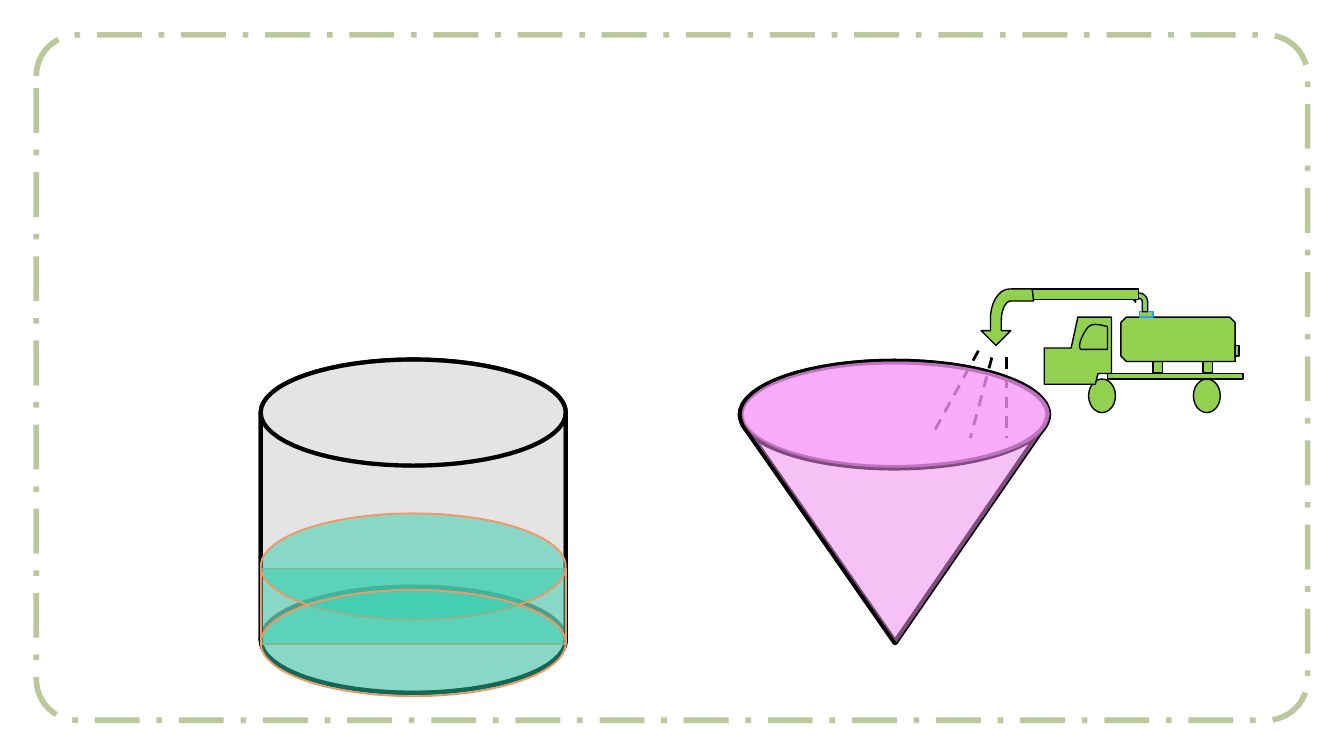
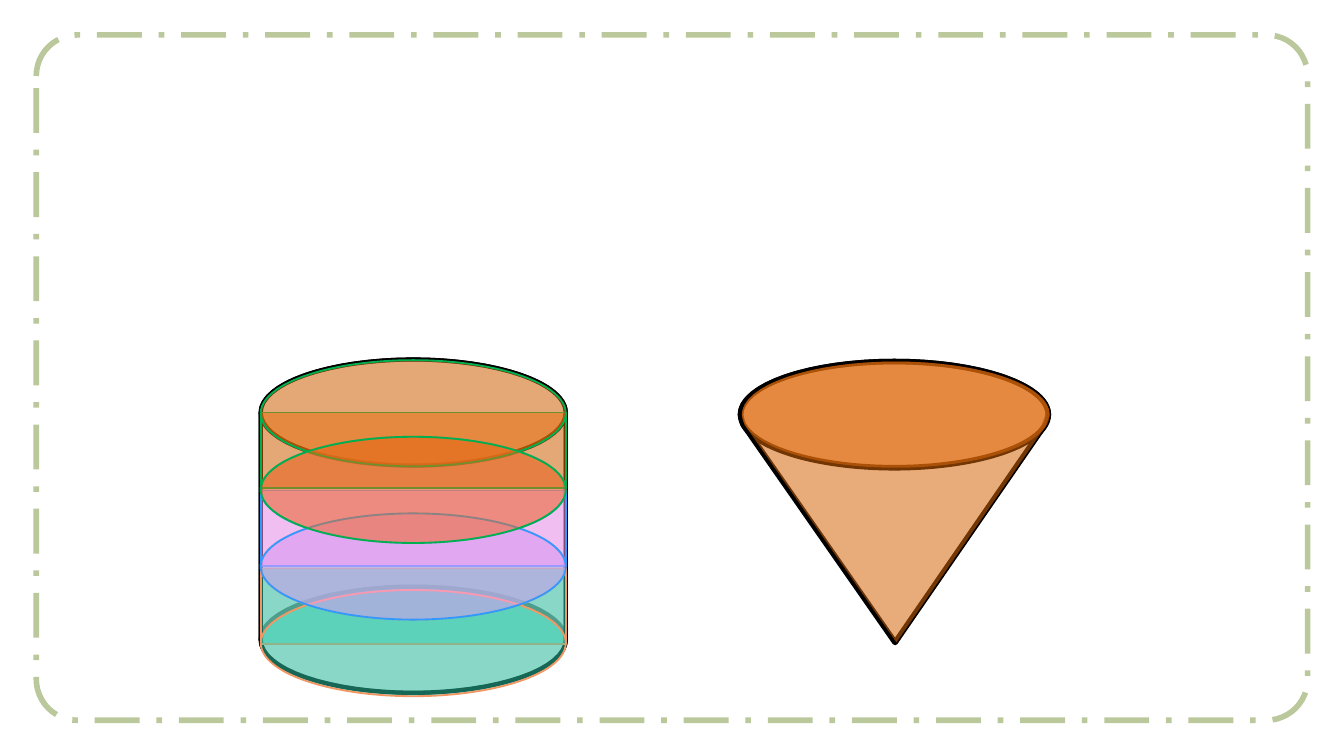
"""Build two slides comparing the volumes of a cylinder and a cone."""
import math

from lxml import etree
from pptx import Presentation
from pptx.dml.color import RGBColor
from pptx.enum import dml, shapes as kinds
from pptx.oxml.ns import qn
from pptx.util import Inches, Pt

WHITE = RGBColor(0xFF, 0xFF, 0xFF)
BLACK = RGBColor(0x00, 0x00, 0x00)
SAGE = RGBColor(0xBA, 0xC8, 0x9B)
GLASS = RGBColor(0xDD, 0xDD, 0xDD)
TRUCK_GREEN = RGBColor(0x92, 0xD0, 0x50)
NAVY = RGBColor(0x00, 0x00, 0x66)
TEAL = RGBColor(0x2F, 0xCE, 0xAC)
CORAL = RGBColor(0xF2, 0x97, 0x64)
PINK = RGBColor(0xFF, 0x99, 0xFF)
BLUE = RGBColor(0x33, 0x99, 0xFF)
ORANGE = RGBColor(0xE4, 0x6C, 0x0A)
GREEN = RGBColor(0x00, 0xB0, 0x50)

RECT = kinds.MSO_SHAPE.RECTANGLE
OVAL = kinds.MSO_SHAPE.OVAL

LEFT, WIDTH, RIM = 1.94, 2.27, 0.79
TOP_AXIS, BOTTOM_AXIS = 3.07, 4.76
LAYER_TOP, LAYER_STEP, LAYER_HEIGHT = 4.23, 0.58, 0.56
RIM_TOP, RIM_STEP = 3.82, 0.57
LAYERS = [(TEAL, CORAL), (PINK, BLUE), (ORANGE, GREEN)]

CHASSIS = [
    (OVAL, 8.88, 2.82, 0.2, 0.25),
    (OVAL, 8.1, 2.82, 0.2, 0.25),
    (RECT, 8.24, 2.78, 1.01, 0.04),
    (RECT, 8.95, 2.69, 0.07, 0.08),
    (RECT, 8.58, 2.69, 0.07, 0.08),
]
CAB = [(8.27, 2.78), (8.27, 2.36), (8.02, 2.36), (7.97, 2.59), (7.77, 2.59),
       (7.77, 2.86), (8.15, 2.86), (8.17, 2.78)]
WINDOW = [(8.24, 2.43), (8.19, 2.42, 8.14, 2.4, 8.1, 2.43),
          (8.07, 2.46, 8.01, 2.57, 8.04, 2.6), (8.24, 2.6)]
TANK = [(9.19, 2.69), (8.38, 2.69), (8.34, 2.65), (8.34, 2.4), (8.38, 2.36),
        (9.15, 2.36), (9.19, 2.4)]
ELBOW = [(8.41, 2.2), (8.45, 2.15), (8.45, 2.18), (8.47, 2.18),
         (8.51, 2.18, 8.54, 2.21, 8.54, 2.25), (8.54, 2.32), (8.5, 2.32),
         (8.5, 2.25), (8.5, 2.23, 8.49, 2.22, 8.47, 2.22), (8.45, 2.22),
         (8.45, 2.25)]
NOZZLE = [(7.41, 2.57), (7.3, 2.46), (7.37, 2.46), (7.37, 2.4),
          (7.36, 2.26, 7.43, 2.15, 7.51, 2.15), (7.68, 2.15), (7.69, 2.24),
          (7.52, 2.24), (7.48, 2.24, 7.45, 2.31, 7.45, 2.39), (7.45, 2.46),
          (7.52, 2.46)]
SPRAY = [(7.28, 2.61, 6.95, 3.21), (7.49, 2.66, 7.49, 3.26),
         (7.38, 2.66, 7.22, 3.26)]


def style(shape, fill, line=None, weight=0.75, alpha=None):
    """Set fill, opacity in percent, outline and no shadow."""
    shape.shadow.inherit = False
    shape.fill.solid()
    shape.fill.fore_color.rgb = fill
    if alpha:
        color = shape.element.spPr.find(".//" + qn("a:srgbClr"))
        etree.SubElement(color, qn("a:alpha"), val=str(alpha * 1000))
    if line is None:
        shape.line.fill.background()
    else:
        shape.line.color.rgb = line
        shape.line.width = Pt(weight)


def add_preset(shapes, kind, left, top, width, height, **look):
    """Add a styled preset shape."""
    shape = shapes.add_shape(kind, *map(Inches, (left, top, width, height)))
    style(shape, **look)
    return shape


def add_line(shapes, ends, color, weight, dash=None):
    """Add a straight line given as x1, y1, x2, y2."""
    line = shapes.add_connector(kinds.MSO_CONNECTOR.STRAIGHT, *map(Inches, ends))
    line.line.color.rgb = color
    line.line.width = Pt(weight)
    if dash:
        line.line.dash_style = dash
    etree.SubElement(line.element.spPr, qn("a:effectLst"))


def flatten(path, steps=8):
    """Turn points and six-number cubic curves into plain points."""
    points = []
    for part in path:
        if len(part) == 2:
            points.append(part)
            continue
        corners = [points[-1], part[:2], part[2:4], part[4:]]
        for step in range(1, steps + 1):
            t = step / steps
            weights = [math.comb(3, k) * t**k * (1 - t)**(3 - k) for k in range(4)]
            points.append(tuple(sum(w * c[axis] for w, c in zip(weights, corners))
                                for axis in (0, 1)))
    return points


def add_outline(shapes, path, **look):
    """Add a styled closed outline."""
    points = [(Inches(x), Inches(y)) for x, y in flatten(path)]
    builder = shapes.build_freeform(*points[0], scale=1.0)
    builder.add_line_segments(points[1:], close=True)
    style(builder.convert_to_shape(), **look)


def half_rim(left, axis, width, side, steps=32):
    """List points left to right on the upper (-1) or lower (1) half rim."""
    radius = width / 2
    angles = [math.pi * step / steps for step in range(steps + 1)]
    return [(left + radius * (1 - math.cos(angle)),
             axis + side * RIM / 2 * math.sin(angle)) for angle in angles]


def add_cylinder(slide):
    """Add the glass cylinder with its back and front walls."""
    shapes = slide.shapes.add_group_shape().shapes
    look = dict(fill=GLASS, line=BLACK, weight=2.25, alpha=50)
    for axis in (BOTTOM_AXIS, TOP_AXIS):
        add_preset(shapes, OVAL, LEFT, axis - RIM / 2, WIDTH, RIM, **look)
    for side in (-1, 1):
        top = half_rim(LEFT, TOP_AXIS, WIDTH, side)
        bottom = half_rim(LEFT, BOTTOM_AXIS, WIDTH, side)
        add_outline(shapes, top + bottom[::-1], **look)


def add_layer(slide, level, fill, line):
    """Add one third of the cylinder's content, counted from the bottom."""
    shapes = slide.shapes.add_group_shape().shapes
    top = LAYER_TOP - level * LAYER_STEP
    look = dict(fill=fill, line=line, weight=1, alpha=50)
    add_preset(shapes, RECT, LEFT, top, WIDTH, LAYER_HEIGHT, **look)
    for x in (LEFT, LEFT + WIDTH):
        add_line(shapes, (x, top, x, top + LAYER_HEIGHT), line, 1)
    for step in (level, level - 1):
        add_preset(shapes, OVAL, LEFT, RIM_TOP - step * RIM_STEP, WIDTH, RIM, **look)


def add_cone(slide, left, **look):
    """Add a cone standing on its tip."""
    shapes = slide.shapes.add_group_shape().shapes
    width, top = 2.29, 2.69
    sides = [(left + 2.26, 3.17), (left + 1.15, 4.78), (left + 0.02, 3.16)]
    rim = half_rim(left, top + RIM / 2, width, -1)
    add_outline(shapes, rim + sides, alpha=50, **look)
    add_preset(shapes, OVAL, left, top, width, RIM, alpha=50, **look)


def add_truck(slide):
    """Add the tank truck with its filling pipe."""
    shapes = slide.shapes.add_group_shape().shapes
    look = dict(fill=TRUCK_GREEN, line=BLACK)
    for part in CHASSIS:
        add_preset(shapes, *part, **look)
    for path in (CAB, WINDOW, TANK):
        add_outline(shapes, path, **look)
    add_preset(shapes, RECT, 8.48, 2.32, 0.1, 0.04, fill=TRUCK_GREEN, line=BLUE)
    add_preset(shapes, RECT, 9.19, 2.57, 0.03, 0.08, **look)
    add_outline(shapes, ELBOW, fill=TRUCK_GREEN, line=NAVY)
    add_preset(shapes, RECT, 7.53, 2.15, 0.94, 0.08, **look)
    add_outline(shapes, NOZZLE, **look)


def add_spray(slide):
    """Add the dashed jets of liquid."""
    shapes = slide.shapes.add_group_shape().shapes
    for jet in SPRAY:
        add_line(shapes, jet, BLACK, 1.5, dml.MSO_LINE.DASH)


def add_glass_cone(slide):
    """Add the empty cone."""
    add_cone(slide, 5.51, fill=GLASS, line=BLACK, weight=3)


def add_frame(slide):
    """Add the dashed frame and hand it to the slide's layout."""
    frame = add_preset(slide.shapes, kinds.MSO_SHAPE.ROUNDED_RECTANGLE,
                       0.27, 0.26, 9.46, 5.1, fill=WHITE, line=SAGE, weight=3)
    frame.adjustments[0] = 0.06
    frame.line.dash_style = dml.MSO_LINE.LONG_DASH_DOT
    slide.slide_layout.shapes.element.append(frame.element)


def build_pouring(slide):
    """Show the truck filling the cone beside a third-full cylinder."""
    add_cylinder(slide)
    add_truck(slide)
    add_glass_cone(slide)
    add_spray(slide)
    add_cone(slide, 5.52, fill=PINK)
    add_layer(slide, 0, *LAYERS[0])


def build_filled(slide):
    """Show the cylinder filled by three cones."""
    add_cylinder(slide)
    for level, colors in enumerate(LAYERS):
        add_layer(slide, level, *colors)
    add_glass_cone(slide)
    add_cone(slide, 5.52, fill=ORANGE)


def main():
    """Build and save the presentation."""
    presentation = Presentation()
    presentation.slide_width = Inches(10)
    presentation.slide_height = Inches(10 * 9 / 16)
    blank = presentation.slide_layouts[6]
    pouring, filled = (presentation.slides.add_slide(blank) for _ in range(2))
    add_frame(pouring)
    build_pouring(pouring)
    build_filled(filled)
    presentation.save("out.pptx")


if __name__ == "__main__":
    main()
